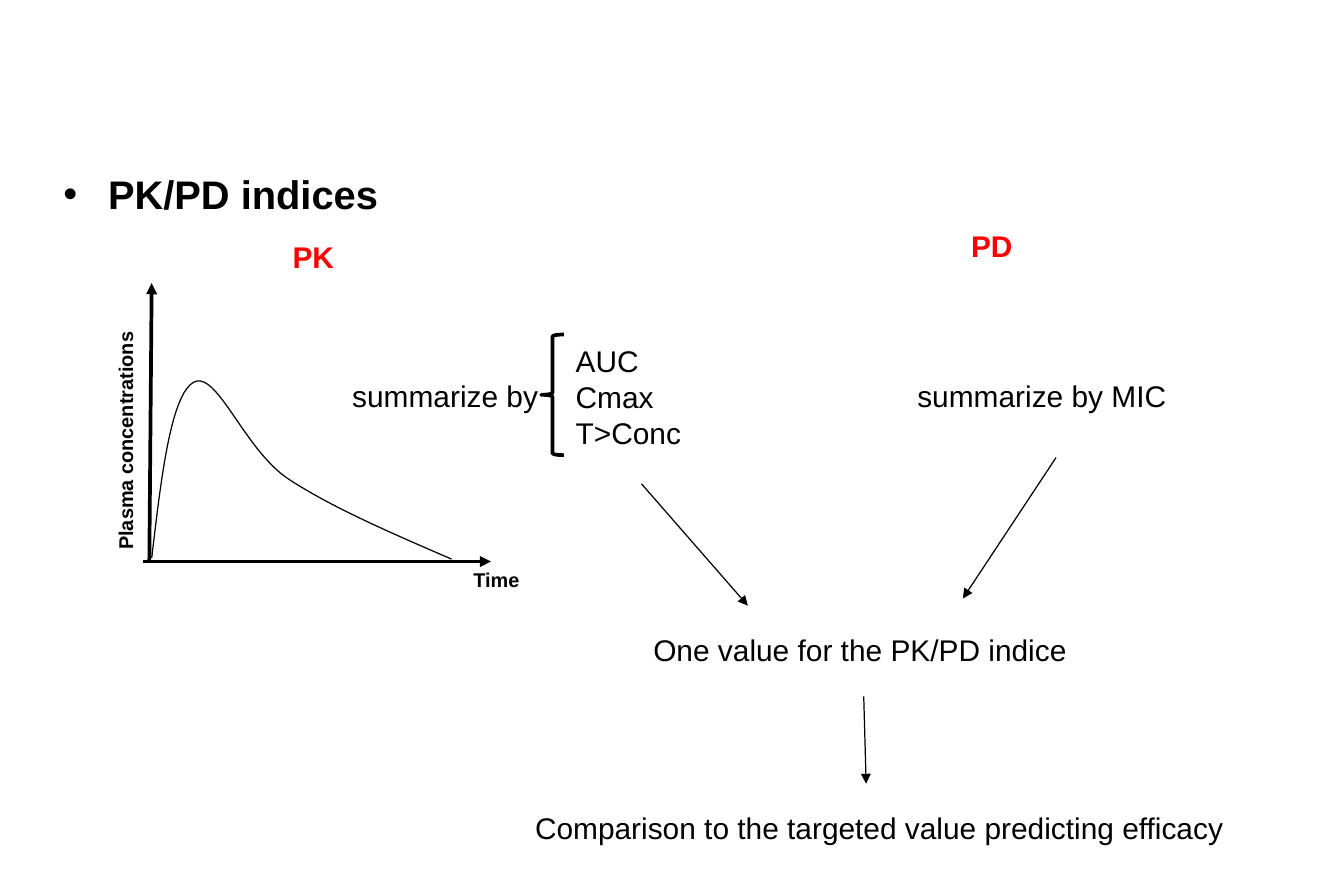
from dataclasses import dataclass

from lxml import etree
from pptx import Presentation
from pptx.dml.color import RGBColor
from pptx.enum.shapes import MSO_CONNECTOR, MSO_SHAPE
from pptx.enum.text import MSO_ANCHOR, MSO_AUTO_SIZE, PP_ALIGN
from pptx.oxml.ns import qn
from pptx.util import Inches, Pt

STRAIGHT = MSO_CONNECTOR.STRAIGHT
LEFT_BRACE = MSO_SHAPE.LEFT_BRACE
TOP = MSO_ANCHOR.TOP
NO_FIT, GROW = MSO_AUTO_SIZE.NONE, MSO_AUTO_SIZE.SHAPE_TO_FIT_TEXT
LEFT, CENTER = PP_ALIGN.LEFT, PP_ALIGN.CENTER

COLUMNS, ROWS = 45, 30
CELL = Inches(0.25)
BLACK, RED = "000000", "FF0000"
FONT = "Arial"
THIN, THICK = 0.75, 2.25
CURVE_STEPS = 20

Point = tuple[float, float]


@dataclass
class Label:
    text: str
    box: tuple[float, float, float, float]
    size: float = 18
    color: str = BLACK
    bold: bool = False
    align: PP_ALIGN = LEFT
    wrap: bool = False
    rotation: float = 0


@dataclass
class Arrow:
    start: Point
    end: Point
    width: float = THIN


LABELS = [
    Label("PD", (32.12, 7.44, 2.48, 1.6), color=RED, bold=True),
    Label("PK", (9.4, 7.8, 2.48, 1.6), color=RED, bold=True),
    Label("Plasma concentrations", (0.12, 14.16, 8.16, 1.2), size=12,
          bold=True, align=CENTER, rotation=270),
    Label("Time", (14.36, 18.8, 4.52, 1.2), size=12, bold=True,
          align=CENTER, wrap=True),
    Label("AUC\nCmax\nT>Conc", (18.88, 11.28, 4.36, 4.04)),
    Label("summarize by", (11.4, 12.44, 7.08, 1.6)),
    Label("summarize by MIC", (30.32, 12.44, 9.24, 1.6)),
    Label("One value for the PK/PD indice", (21.48, 20.96, 14.76, 1.6)),
    Label("Comparison to the targeted value predicting efficacy",
          (17.52, 26.92, 24.08, 1.6)),
]

ARROWS = [
    Arrow((5, 18.8), (5.08, 9.48), THICK),
    Arrow((4.8, 18.8), (16.44, 18.8), THICK),
    Arrow((21.48, 16.2), (25.04, 20.28)),
    Arrow((35.36, 15.32), (32.24, 20.04)),
    Arrow((28.92, 23.32), (29, 26.24)),
]

CURVE_START = (5.08, 18.68)
CURVE_SEGMENTS = [
    ((5.4, 15.96), (5.72, 13.24), (6.48, 12.8)),
    ((7.24, 12.36), (8.16, 15), (9.6, 16)),
    ((11.04, 16.96), (13.08, 17.84), (15.12, 18.72)),
]


def grid(*cells: float) -> list[int]:
    return [round(c * CELL) for c in cells]


def rgb(color: str) -> RGBColor:
    return RGBColor.from_string(color)


def write(tf, text: str, *, size: float = 18, color: str = BLACK,
          bold: bool = False, align: PP_ALIGN = LEFT, wrap: bool = True,
          fit: MSO_AUTO_SIZE = GROW) -> None:
    tf.word_wrap = wrap
    tf.auto_size = fit
    tf.vertical_anchor = TOP
    for i, line in enumerate(text.split("\n")):
        p = tf.paragraphs[0] if i == 0 else tf.add_paragraph()
        p.alignment = align
        r = p.add_run()
        r.text = line
        r.font.name = FONT
        r.font.size = Pt(size)
        r.font.bold = bold
        r.font.color.rgb = rgb(color)


def outline(sp, width: float) -> None:
    sp.line.color.rgb = rgb(BLACK)
    sp.line.width = Pt(width)


def add_heading(s, text: str) -> None:
    title = s.shapes.title
    title._element.getparent().remove(title._element)
    sp = s.placeholders[1]
    sp.left, sp.top, sp.width, sp.height = grid(1.72, 5.48, 14.4, 2.28)
    write(sp.text_frame, text, size=24, bold=True, fit=NO_FIT)


def add_label(s, label: Label) -> None:
    sp = s.shapes.add_textbox(*grid(*label.box))
    sp.rotation = label.rotation
    write(sp.text_frame, label.text, size=label.size, color=label.color,
          bold=label.bold, align=label.align, wrap=label.wrap)


def add_arrow(s, arrow: Arrow) -> None:
    sp = s.shapes.add_connector(STRAIGHT, *grid(*arrow.start, *arrow.end))
    outline(sp, arrow.width)
    etree.SubElement(sp.line._get_or_add_ln(), qn("a:tailEnd"), type="triangle")
    etree.SubElement(sp._element.spPr, qn("a:effectLst"))


def bezier(points: list[Point], t: float) -> Point:
    while len(points) > 1:
        points = [(x0 + (x1 - x0) * t, y0 + (y1 - y0) * t)
                  for (x0, y0), (x1, y1) in zip(points, points[1:])]
    return points[0]


def add_curve(s) -> None:
    start, vertices = CURVE_START, []
    for segment in CURVE_SEGMENTS:
        vertices += [grid(*bezier([start, *segment], i / CURVE_STEPS))
                     for i in range(1, CURVE_STEPS + 1)]
        start = segment[-1]
    builder = s.shapes.build_freeform(*grid(*CURVE_START))
    builder.add_line_segments(vertices, close=False)
    sp = builder.convert_to_shape()
    sp.shadow.inherit = False
    sp.fill.background()
    outline(sp, THIN)


def add_brace(s) -> None:
    sp = s.shapes.add_shape(LEFT_BRACE, *grid(18.12, 11.2, 0.76, 4.04))
    sp.shadow.inherit = False
    sp.fill.background()
    outline(sp, THICK)


def main() -> None:
    prs = Presentation()
    prs.slide_width, prs.slide_height = grid(COLUMNS, ROWS)
    s = prs.slides.add_slide(prs.slide_layouts[1])
    add_heading(s, "PK/PD indices")
    for arrow in ARROWS:
        add_arrow(s, arrow)
    add_curve(s)
    add_brace(s)
    for label in LABELS:
        add_label(s, label)
    prs.save("out.pptx")


if __name__ == "__main__":
    main()
